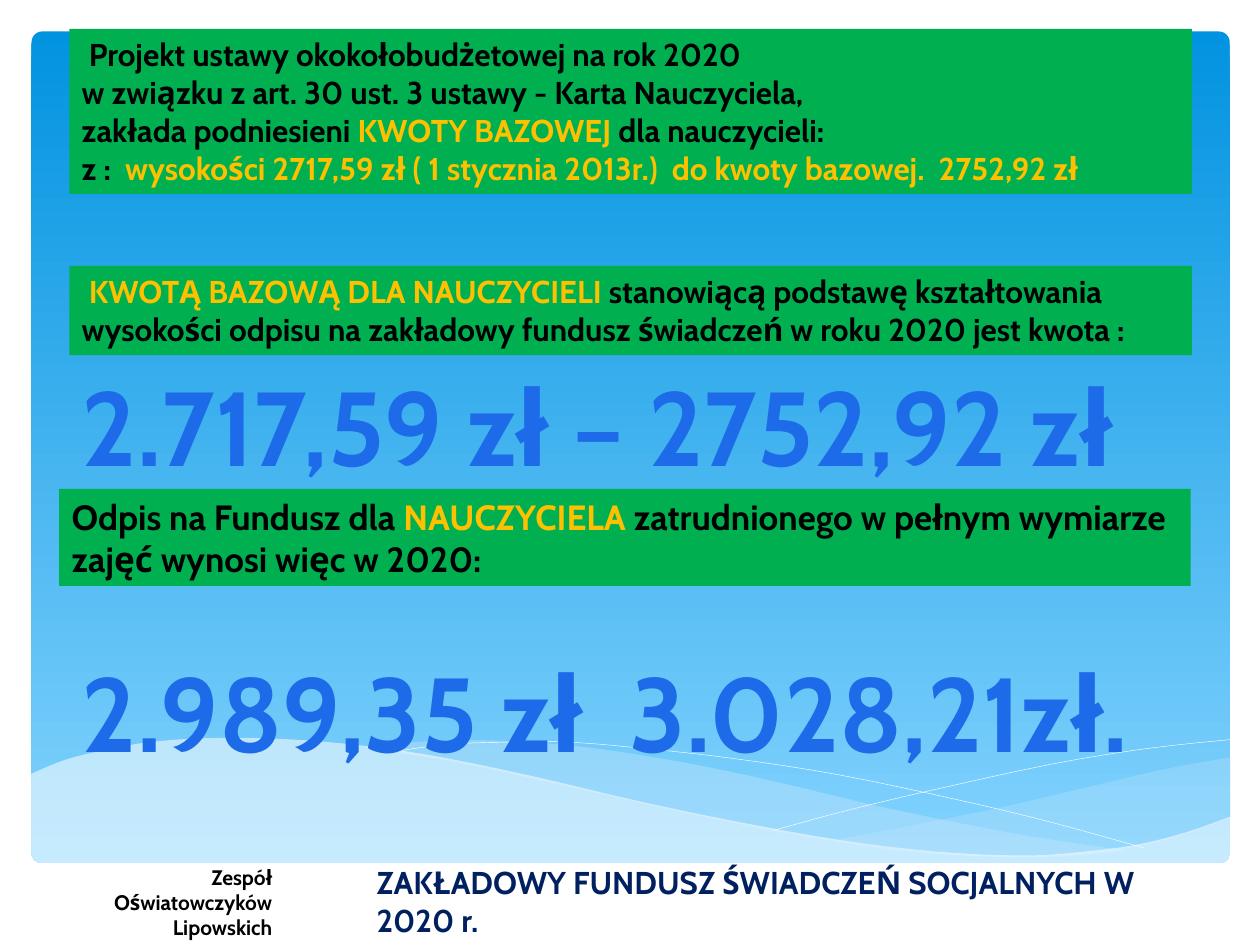
from dataclasses import dataclass
from itertools import pairwise

from lxml.etree import SubElement
from pptx import Presentation
from pptx.dml.color import RGBColor as Rgb
from pptx.enum.shapes import MSO_SHAPE as Shape
from pptx.enum.text import MSO_ANCHOR as Anchor, PP_ALIGN as Align
from pptx.oxml.ns import qn
from pptx.util import Inches, Pt

CELL = Inches(0.1)
COLUMNS, ROWS = 100, 75
CURVE_STEPS = 4


@dataclass(frozen=True)
class Theme:
    font: str = "Cabin"
    black: str = "000000"
    gold: str = "FFC000"
    green: str = "00B050"
    navy: str = "002060"
    blue: str = "1D6BE8"
    white: str = "FFFFFF"
    mist: str = "C6E7FC"
    sky_top: str = "0293E0"
    sky_bottom: str = "83D3FE"
    small: int = 12
    body: int = 18
    lead: int = 20
    amount: int = 60
    hairline: float = 0.25


THEME = Theme()


@dataclass(frozen=True)
class Span:
    words: str
    color: str = THEME.black


@dataclass(frozen=True)
class TextBlock:
    area: tuple[float, float, float, float]
    spans: tuple[Span, ...]
    size: int = THEME.body
    fill: str | None = None
    align: Align = Align.LEFT
    wrap: bool = True


@dataclass(frozen=True)
class Wave:
    edges: tuple[tuple[tuple[float, float], ...], ...]
    color: str = THEME.white
    opacity: int | None = None


WAVES = (
    Wave((
        ((97.7, 60.1), (92.2, 61.1), (86.2, 62.5), (78, 64.4), (66.2, 66.7)),
        ((66.2, 66.7), (71.9, 67.4), (77, 67.9), (81.5, 68), (86.4, 67.7),
         (90.7, 67.1), (94.4, 66.1), (97.7, 64.9)),
    ), THEME.mist, 29),
    Wave((
        ((89.4, 67.5), (80.8, 66.2), (70.7, 64.2), (61.4, 62), (54.2, 60.5),
         (46.5, 59.3), (40, 58.8), (34.5, 58.8), (28.7, 59.3)),
        ((28.7, 59.3), (36.3, 60.5), (45, 62.4), (56.7, 65), (65.1, 66.6),
         (72.3, 67.6), (78.6, 68), (83.9, 68), (89.4, 67.5)),
    ), THEME.mist, 40),
    Wave((
        ((31, 59.7), (35.3, 59.1), (40.2, 58.9), (45.1, 58.9), (51.1, 59.4),
         (58.2, 60.2), (66.6, 61.5), (76.1, 63.5), (83.2, 65.2), (90.8, 67.3)),
    )),
    Wave((
        ((61.4, 65.9), (67.3, 64.3), (74.9, 62.5), (83.7, 60.6),
         (91.1, 59.4), (97.6, 58.7)),
    )),
    Wave((
        ((97.7, 64.8), (94, 66.1), (89.9, 67.1), (85, 67.7), (80.9, 67.9),
         (74.4, 67.6), (66.8, 66.7), (57.9, 65.1), (50.3, 63.5), (41.8, 61.5),
         (33.9, 59.9), (27.1, 59), (21.1, 58.6), (16.1, 58.6), (11.9, 58.9),
         (8.5, 59.5), (5.2, 60.3), (2.3, 61.5)),
        ((2.3, 61.5), (2.3, 73.1)),
        ((2.3, 73.1), (97.7, 73.1)),
    ), THEME.white, 55),
)

TEXTS = (
    TextBlock((4.7, 38.8, 89.8, 7.7), (
        Span("Odpis na Fundusz dla "),
        Span("NAUCZYCIELA ", THEME.gold),
        Span("zatrudnionego w pełnym wymiarze zajęć wynosi więc w 2020:"),
    ), THEME.lead, THEME.green),
    TextBlock((5.5, 2.3, 89.1, 13.1), (
        Span(" Projekt ustawy okokołobudżetowej na rok 2020 \n"
             "w związku z art. 30 ust. 3 ustawy - Karta Nauczyciela, \n"
             "zakłada podniesieni "),
        Span("KWOTY BAZOWEJ ", THEME.gold),
        Span("dla nauczycieli: \nz :  "),
        Span("wysokości 2717,59 zł ( 1 stycznia 2013r.)  do kwoty bazowej.  2752,92 zł",
             THEME.gold),
    ), fill=THEME.green),
    TextBlock((5.5, 21.1, 89.1, 7.1), (
        Span(" KWOTĄ BAZOWĄ DLA NAUCZYCIELI ", THEME.gold),
        Span("stanowiącą podstawę kształtowania wysokości odpisu "
             "na zakładowy fundusz świadczeń w roku 2020 jest kwota :"),
    ), fill=THEME.green),
    TextBlock((5.5, 50.9, 85, 11.1), (Span("2.989,35 zł  3.028,21zł.", THEME.blue),),
              THEME.amount, align=Align.CENTER, wrap=False),
    TextBlock((28.9, 68, 67, 4), (
        Span("ZAKŁADOWY FUNDUSZ ŚWIADCZEŃ SOCJALNYCH W 2020 r.", THEME.navy),)),
    TextBlock((5.5, 28.2, 83.9, 11.1), (Span("2.717,59 zł – 2752,92 zł", THEME.blue),),
              THEME.amount, wrap=False),
    TextBlock((2.3, 68.1, 20.3, 7.1), (Span("Zespół\n Oświatowczyków Lipowskich"),),
              THEME.small, align=Align.RIGHT),
)


def set_all(target, values: dict) -> None:
    for name, value in values.items():
        setattr(target, name, value)


def on_grid(values) -> list[int]:
    return [round(value * CELL) for value in values]


def smooth(knots) -> list[tuple[float, float]]:
    padded = (knots[0], *knots, knots[-1])
    points = [knots[0]]
    for index, (start, end) in enumerate(pairwise(knots)):
        before, after = padded[index], padded[index + 3]
        for step in range(1, CURVE_STEPS + 1):
            t = step / CURVE_STEPS
            points.append(tuple(
                (2 * b + (c - a) * t + (2 * a - 5 * b + 4 * c - d) * t**2
                 + (3 * b - a - 3 * c + d) * t**3) / 2
                for a, b, c, d in zip(before, start, end, after)))
    return points


def draw_panel(page) -> None:
    panel = page.shapes.add_shape(Shape.ROUNDED_RECTANGLE, *on_grid((2.5, 2.5, 95.1, 66)))
    panel.adjustments[0] = 0.013
    panel.shadow.inherit = False
    panel.line.fill.background()
    panel.fill.gradient()
    panel.fill.gradient_angle = 270
    for stop, color in zip(panel.fill.gradient_stops, (THEME.sky_top, THEME.sky_bottom)):
        stop.color.rgb = Rgb.from_string(color)


def draw_wave(page, wave: Wave) -> None:
    filled = wave.opacity is not None
    points = [on_grid(point) for edge in wave.edges for point in smooth(edge)]
    builder = page.shapes.build_freeform(*points[0])
    builder.add_line_segments(points[1:], close=filled)
    shape = builder.convert_to_shape()
    shape.shadow.inherit = False
    if filled:
        shape.line.fill.background()
        shape.fill.solid()
        shape.fill.fore_color.rgb = Rgb.from_string(wave.color)
        tint = shape.fill._xPr.find(".//" + qn("a:srgbClr"))
        SubElement(tint, qn("a:alpha"), val=str(wave.opacity * 1000))
    else:
        shape.fill.background()
        shape.line.color.rgb = Rgb.from_string(wave.color)
        shape.line.width = Pt(THEME.hairline)


def draw_text(page, block: TextBlock) -> None:
    area = on_grid(block.area)
    if block.fill:
        box = page.shapes.add_shape(Shape.RECTANGLE, *area)
        box.shadow.inherit = False
        box.line.fill.background()
        box.fill.solid()
        box.fill.fore_color.rgb = Rgb.from_string(block.fill)
    else:
        box = page.shapes.add_textbox(*area)
    set_all(box.text_frame, {"word_wrap": block.wrap, "vertical_anchor": Anchor.TOP})
    para = box.text_frame.paragraphs[0]
    para.alignment = block.align
    for span in block.spans:
        for index, words in enumerate(span.words.split("\n")):
            if index:
                para.add_line_break()
            run = para.add_run()
            run.text = words
            set_all(run.font, {"name": THEME.font, "size": Pt(block.size), "bold": True})
            run.font.color.rgb = Rgb.from_string(span.color)


def main() -> None:
    deck = Presentation()
    set_all(deck, {"slide_width": COLUMNS * CELL, "slide_height": ROWS * CELL})
    page = deck.slides.add_slide(deck.slide_layouts[6])
    draw_panel(page)
    for wave in WAVES:
        draw_wave(page, wave)
    for block in TEXTS:
        draw_text(page, block)
    deck.save("out.pptx")


if __name__ == "__main__":
    main()
